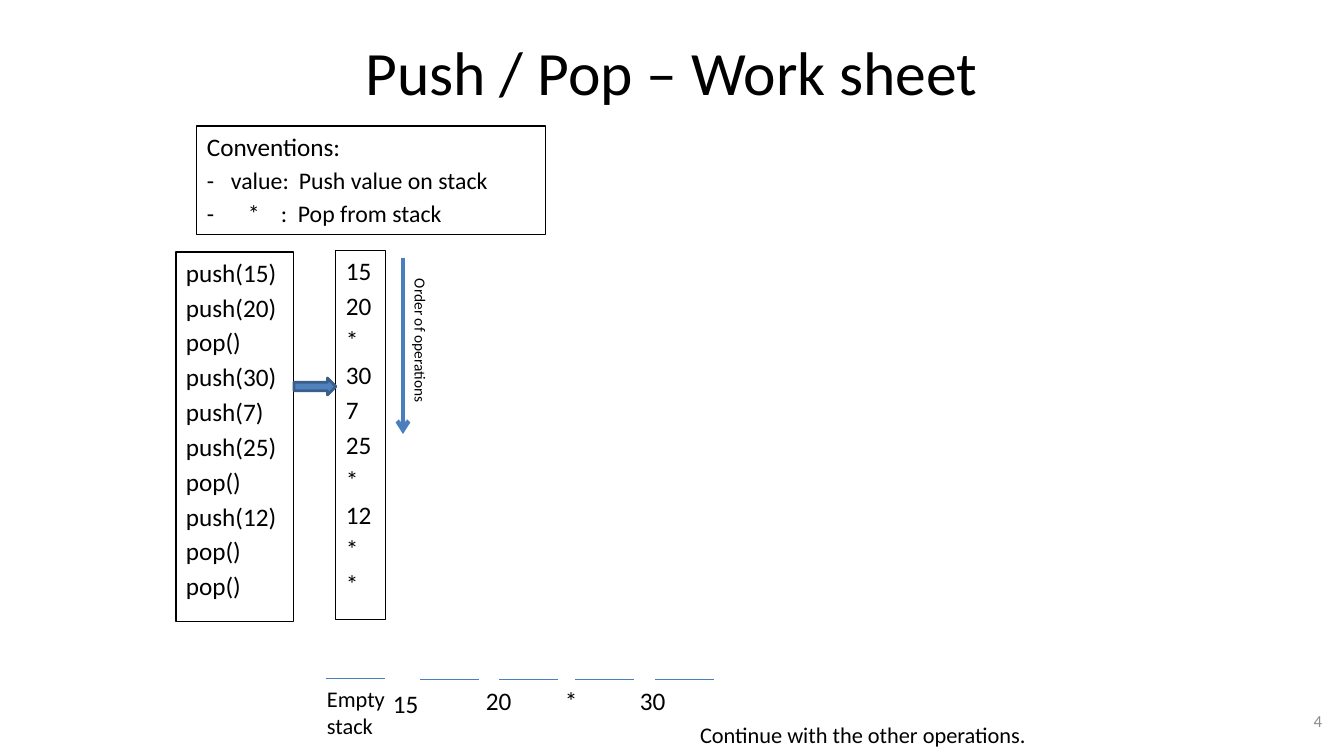
"""Build the push and pop work sheet slide."""
from lxml import etree
from pptx import Presentation, util as u
from pptx.dml.color import RGBColor
from pptx.enum import shapes, text
from pptx.oxml.ns import qn

PX = 914400 / 100.8
BLUE = "4B7EBC"
LEFT, CENTER, RIGHT = text.PP_ALIGN.LEFT, text.PP_ALIGN.CENTER, text.PP_ALIGN.RIGHT


def px(*lengths):
    return [u.Emu(round(length * PX)) for length in lengths]


def color(value):
    return RGBColor.from_string(value)


presentation = Presentation()
presentation.slide_width, presentation.slide_height = px(1344, 756)
slide = presentation.slides.add_slide(presentation.slide_layouts[6])

operations = ["push(15)", "push(20)", "pop()", "push(30)", "push(7)",
              "push(25)", "pop()", "push(12)", "pop()", "pop()"]
symbols = ["15", "20", "*", "30", "7", "25", "*", "12", "*", "*"]
conventions = ["Conventions:", "-\tvalue:\tPush value on stack", "-\t*\t:\tPop from stack"]
convention_tabs = [[], [24, 92], [41, 74, 91]]

labels = [
    ("Push / Pop – Work sheet", (67, 8, 1210, 126), 44, CENTER, "000000"),
    ("4", (1019, 701, 313, 40), 12, RIGHT, "8C8C8C"),
    ("15", (383, 683, 53, 40), 18, LEFT, "000000"),
    ("20", (476, 680, 53, 40), 18, LEFT, "000000"),
    ("*", (555, 680, 33, 40), 18, LEFT, "000000"),
    ("30", (630, 680, 50, 40), 18, LEFT, "000000"),
    ("Continue with the other operations.", (684, 716, 358, 37), 16, CENTER, "000000"),
    ("Empty stack", (317, 680, 93, 65), 16, LEFT, "000000"),
    ("Order of operations", (348, 327, 145, 29), 11, LEFT, "000000"),
]
for wording, place, size, alignment, ink in labels:
    label = slide.shapes.add_textbox(*px(*place))
    frame = label.text_frame
    frame.word_wrap = True
    if alignment != LEFT and size != 16:
        frame.vertical_anchor = text.MSO_ANCHOR.MIDDLE
    if wording == "Order of operations":
        label.rotation = 90
        frame.word_wrap = False
    paragraph = frame.paragraphs[0]
    paragraph.alignment = alignment
    run = paragraph.add_run()
    run.text = wording
    run.font.name, run.font.size = "Calibri", u.Pt(size)
    run.font.color.rgb = color(ink)

lines = [(326, 679, 385, 679, 0.75)]
lines += [(left, 680, left + 59, 680, 0.75) for left in (420, 499, 575, 655)]
lines.append((403, 258, 403, 434, 3))
for *ends, width in lines:
    line = slide.shapes.add_connector(shapes.MSO_CONNECTOR.STRAIGHT, *px(*ends))
    line.line.color.rgb = color(BLUE)
    line.line.width = u.Pt(width)
    if width == 3:
        etree.SubElement(line.line._get_or_add_ln(), qn("a:tailEnd"), type="arrow")
    etree.SubElement(line._element.spPr, qn("a:effectLst"))

boxes = [
    (operations, (176, 252, 118, 370), [18] * 10, [[]] * 10),
    (conventions, (197, 126, 349, 109), [18, 17, 17], convention_tabs),
    (symbols, (336, 250, 50, 370), [18] * 10, [[]] * 10),
]
for wordings, place, sizes, tabs in boxes:
    box = slide.shapes.add_shape(shapes.MSO_SHAPE.RECTANGLE, *px(*place))
    box.shadow.inherit = False
    box.fill.background()
    box.line.color.rgb = color("000000")
    box.line.width = u.Pt(0.75)
    frame = box.text_frame
    frame.word_wrap = True
    frame.vertical_anchor = text.MSO_ANCHOR.TOP
    for index, (wording, size, stops) in enumerate(zip(wordings, sizes, tabs)):
        paragraph = frame.add_paragraph() if index else frame.paragraphs[0]
        paragraph.alignment = LEFT
        paragraph.space_before = u.Pt(3.3)
        if stops:
            tab_list = etree.SubElement(paragraph._p.get_or_add_pPr(), qn("a:tabLst"))
            for stop in px(*stops):
                etree.SubElement(tab_list, qn("a:tab"), pos=str(int(stop)), algn="l")
        run = paragraph.add_run()
        run.text = wording
        run.font.name, run.font.size = "Calibri", u.Pt(size)
        run.font.color.rgb = color("000000")

arrow = slide.shapes.add_shape(shapes.MSO_SHAPE.RIGHT_ARROW, *px(294, 378, 42, 17))
arrow.shadow.inherit = False
arrow.fill.solid()
arrow.fill.fore_color.rgb = color("4F81BD")
arrow.line.color.rgb = color("3A5F8C")
arrow.line.width = u.Pt(2)

presentation.save("out.pptx")
